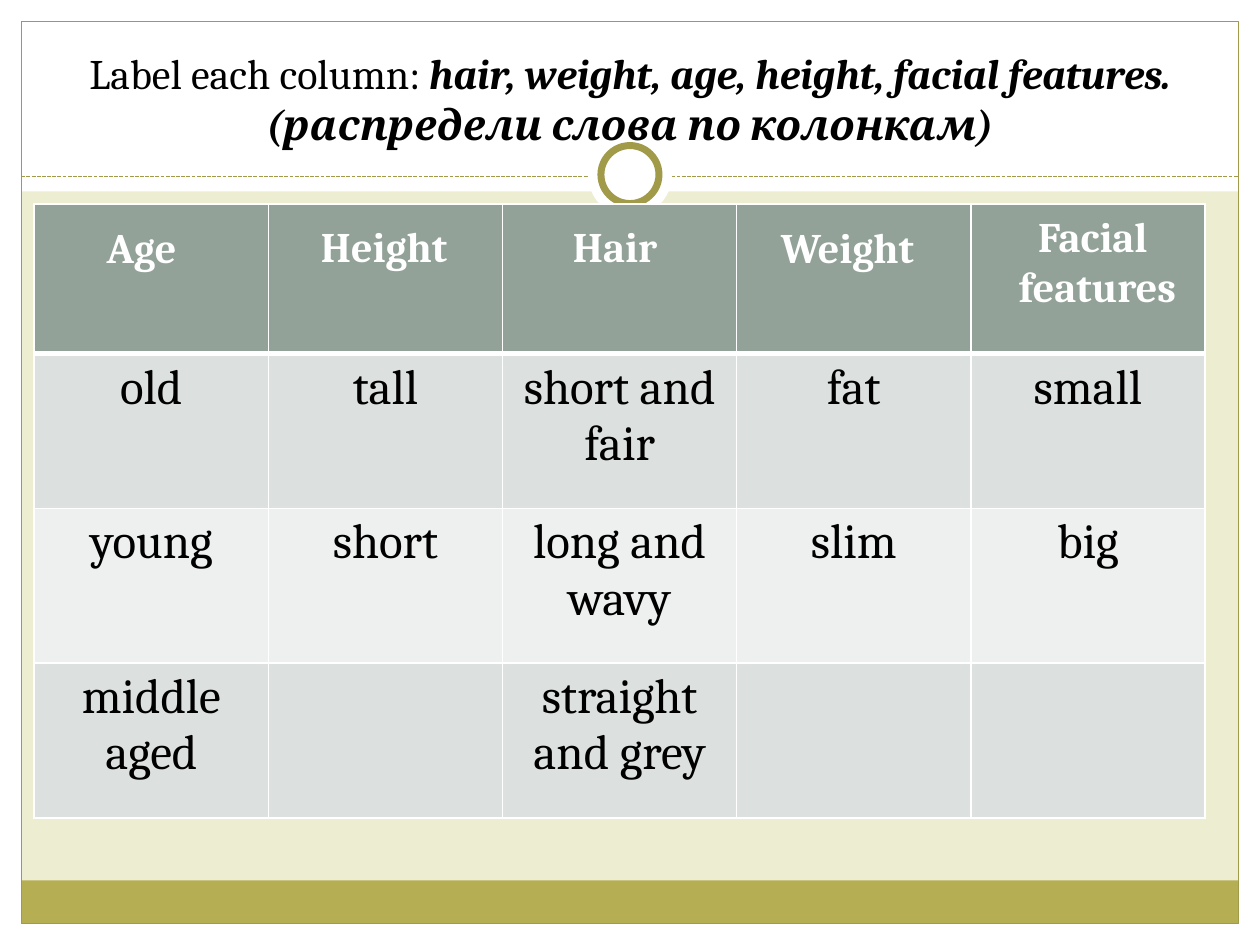
from typing import NamedTuple

from lxml.etree import SubElement
from pptx import Presentation
from pptx.dml.color import RGBColor
from pptx.enum.dml import MSO_LINE
from pptx.enum.shapes import MSO_CONNECTOR, MSO_SHAPE
from pptx.enum.text import MSO_ANCHOR, MSO_AUTO_SIZE, PP_ALIGN
from pptx.oxml import parse_xml
from pptx.oxml.ns import nsdecls, qn
from pptx.util import Cm, Pt

FONT = "Cambria"
WHITE, BLACK, CREAM = "FFFFFF", "000000", "ECEDD1"
OLIVE, OLIVE_LINE = "B5AE53", "A09A49"
HEADER, BAND_DARK, BAND_LIGHT = "93A299", "DCE0DE", "EEF0EF"
WIDTH, HEIGHT, MARGIN = 25.4, 19.05, 0.43
RULE_Y = 3.56


class Box(NamedTuple):
    left: float
    top: float
    width: float
    height: float

    def lengths(self) -> list:
        return [Cm(value) for value in self]


class Label(NamedTuple):
    text: str
    box: Box
    align: PP_ALIGN = PP_ALIGN.LEFT


MASKS = [
    Box(0, HEIGHT - MARGIN, WIDTH, MARGIN),
    Box(0, 0, WIDTH, 3.86),
    Box(0, 0, MARGIN, HEIGHT),
    Box(WIDTH - MARGIN, 0, MARGIN, HEIGHT),
]
FRAME = Box(MARGIN, MARGIN, WIDTH - 2 * MARGIN, HEIGHT - 2 * MARGIN)
FOOTER = Box(MARGIN, 17.75, WIDTH - 2 * MARGIN, 0.87)

LABELS = [
    Label("Height", Box(6.22, 4.32, 3.51, 1.27)),
    Label("Age", Box(1.9, 4.34, 2.16, 1.27)),
    Label("Hair", Box(11.3, 4.32, 2.54, 1.27)),
    Label("Weight", Box(15.49, 4.34, 3.68, 1.27)),
    Label("Facial\n features", Box(19.86, 4.11, 4.34, 2.31), PP_ALIGN.CENTER),
]
WORDS = [
    ["old", "tall", "short and fair", "fat", "small"],
    ["young", "short", "long and wavy", "slim", "big"],
    ["middle aged", "", "straight and grey", "", ""],
]


def rgb(color: str) -> RGBColor:
    return RGBColor.from_string(color)


def add_shape(s, kind: MSO_SHAPE, box: Box, fill: str = "", line: str = "", weight: float = 0.75):
    sp = s.shapes.add_shape(kind, *box.lengths())
    sp.shadow.inherit = False
    if fill:
        sp.fill.solid()
        sp.fill.fore_color.rgb = rgb(fill)
    else:
        sp.fill.background()
    if line:
        sp.line.color.rgb = rgb(line)
        sp.line.width = Pt(weight)
    else:
        sp.line.fill.background()


def add_circle(s, diameter: float, line: str = "", weight: float = 0.75):
    """Centre a white circle on the slide, just above the dashed rule."""
    box = Box((WIDTH - diameter) / 2, RULE_Y - 0.04 - diameter / 2, diameter, diameter)
    add_shape(s, MSO_SHAPE.OVAL, box, WHITE, line, weight)


def add_run(p, text: str, size: float, color: str, bold: bool = False, italic: bool = False):
    r = p.add_run()
    r.text = text
    r.font.name, r.font.size = FONT, Pt(size)
    r.font.bold, r.font.italic = bold, italic
    r.font.color.rgb = rgb(color)


def add_dashed_rule(s):
    line = s.shapes.add_connector(
        MSO_CONNECTOR.STRAIGHT, Cm(MARGIN), Cm(RULE_Y), Cm(WIDTH - MARGIN), Cm(RULE_Y))
    line.line.color.rgb = rgb(OLIVE_LINE)
    line.line.width = Pt(0.75)
    line.line.dash_style = MSO_LINE.SQUARE_DOT
    SubElement(line._element.spPr, qn("a:effectLst"))


def add_title(s):
    tf = s.shapes.add_textbox(*Box(1.27, 0.76, 22.86, 2.36).lengths()).text_frame
    tf.word_wrap = True
    tf.vertical_anchor = MSO_ANCHOR.BOTTOM
    p = tf.paragraphs[0]
    p.alignment = PP_ALIGN.CENTER
    add_run(p, "Label each column: ", 24, BLACK)
    add_run(p, "hair, weight, age, height, facial features.(распредели слова по колонкам)",
            24, BLACK, bold=True, italic=True)


def add_label(s, label: Label):
    tf = s.shapes.add_textbox(*label.box.lengths()).text_frame
    tf.word_wrap = False
    tf.auto_size = MSO_AUTO_SIZE.SHAPE_TO_FIT_TEXT
    p = tf.paragraphs[0]
    p.alignment = label.align
    for i, text in enumerate(label.text.split("\n")):
        if i:
            p.add_line_break()
        add_run(p, text, 24, WHITE, bold=True)


def style_cell(cell, fill: str, top: float, bottom: float):
    """Fill a cell and give it white borders, 1 pt wide at the sides."""
    cell.fill.solid()
    cell.fill.fore_color.rgb = rgb(fill)
    tc_pr = cell._tc.get_or_add_tcPr()
    for i, (side, weight) in enumerate(zip("LRTB", (1, 1, top, bottom))):
        tc_pr.insert(i, parse_xml(
            f'<a:ln{side} {nsdecls("a")} w="{Pt(weight)}"><a:solidFill>'
            f'<a:srgbClr val="{WHITE}"/></a:solidFill></a:ln{side}>'))


def add_word_table(s):
    table = s.shapes.add_table(4, 5, *Box(0.69, 4.11, 23.6, 12.38).lengths()).table
    for column in table.columns:
        column.width = Cm(4.72)
    for i, row in enumerate(table.rows):
        row.height = Cm(3.12 if i else 3.02)
        fill = (BAND_DARK if i % 2 else BAND_LIGHT) if i else HEADER
        for j, cell in enumerate(row.cells):
            style_cell(cell, fill, top=3 if i == 1 else 1, bottom=1 if i else 3)
            if i and WORDS[i - 1][j]:
                p = cell.text_frame.paragraphs[0]
                p.alignment = PP_ALIGN.CENTER
                add_run(p, WORDS[i - 1][j], 28, BLACK)


def main():
    prs = Presentation()
    prs.slide_width, prs.slide_height = Cm(WIDTH), Cm(HEIGHT)
    s = prs.slides.add_slide(prs.slide_layouts[6])
    s.background.fill.solid()
    s.background.fill.fore_color.rgb = rgb(CREAM)

    for mask in MASKS:
        add_shape(s, MSO_SHAPE.RECTANGLE, mask, WHITE)
    add_shape(s, MSO_SHAPE.RECTANGLE, FOOTER, OLIVE)
    add_shape(s, MSO_SHAPE.RECTANGLE, FRAME, line=OLIVE_LINE)
    add_dashed_rule(s)
    add_circle(s, 1.7)
    add_circle(s, 1.17, OLIVE_LINE, 4)

    add_title(s)
    add_word_table(s)
    for label in LABELS:
        add_label(s, label)
    prs.save("out.pptx")


if __name__ == "__main__":
    main()
